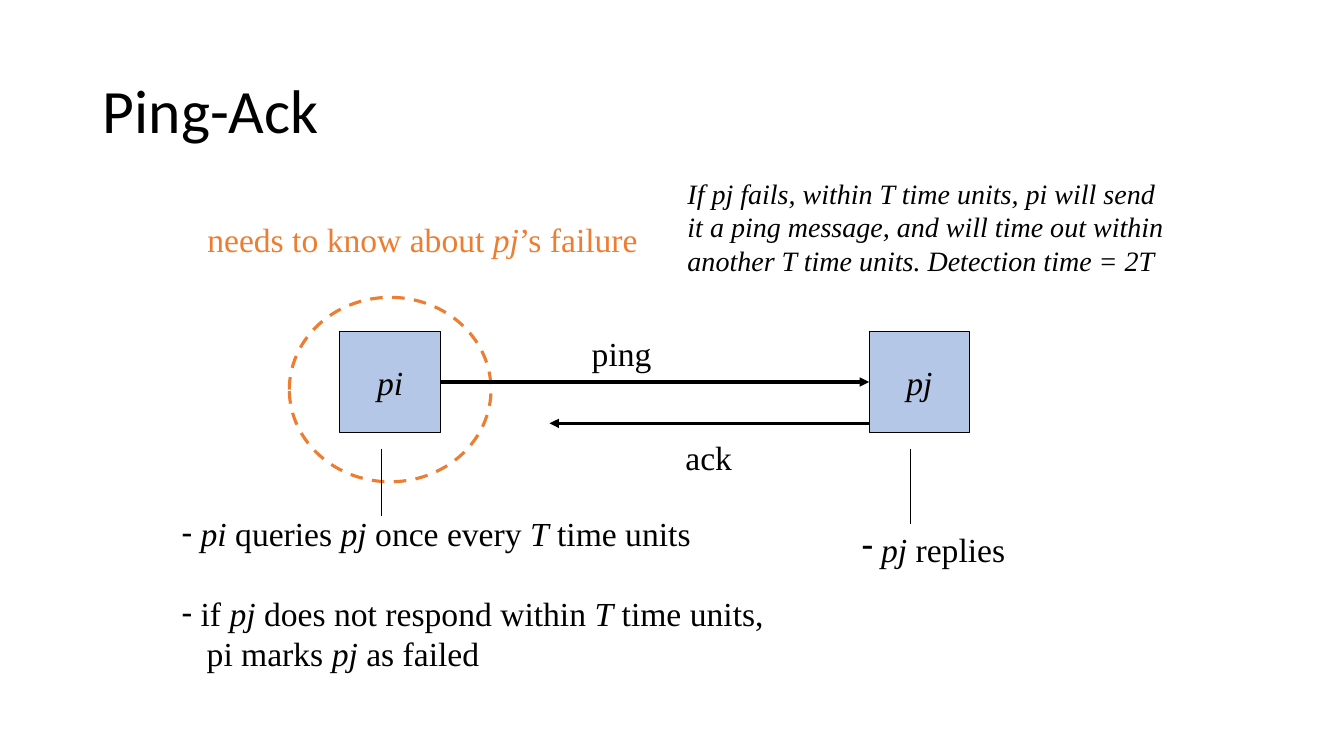
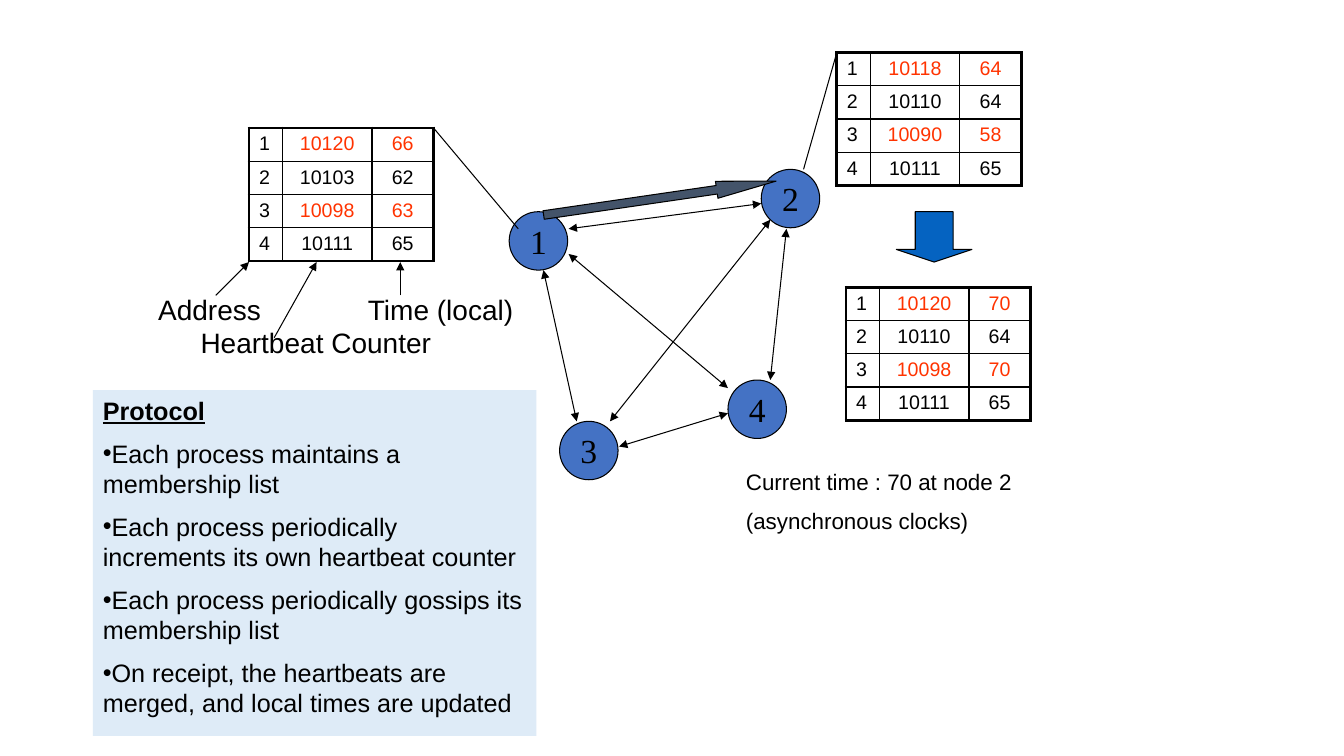
"""Build two slides on failure detection: ping-ack and gossiped heartbeats."""
import dataclasses
import typing

import lxml.etree
import pptx
import pptx.dml.color
import pptx.enum.dml
import pptx.enum.shapes
import pptx.enum.text
import pptx.oxml.ns
import pptx.util

Inches = pptx.util.Inches
Pt = pptx.util.Pt
qn = pptx.oxml.ns.qn
ALIGN = pptx.enum.text.PP_ALIGN
ANCHOR = pptx.enum.text.MSO_ANCHOR
SHAPE = pptx.enum.shapes.MSO_SHAPE

COLORS = {
    "ink": "000000", "process": "B4C7E7", "accent": "ED7D31", "node": "4472C4",
    "gossip": "44546A", "merge": "0563C1", "panel": "DEEBF7", "changed": "FF3300",
}
SERIF, SANS, HEADING = "Times New Roman", "Arial", "Calibri"
CONTENT_LAYOUT = 1
THIN, THICK = 0.75, 2.25
COLUMN_WIDTHS = (0.33, 0.89, 0.61)
ROW_HEIGHT = 0.33
NODE_SIZE = 0.58


class Box(typing.NamedTuple):
    left: float
    top: float
    width: float
    height: float


class Point(typing.NamedTuple):
    x: float
    y: float


@dataclasses.dataclass
class Para:
    text: str
    bullet: str = ""
    margin: float = 0
    hanging: float = 0
    before: float = 0
    font: dict = dataclasses.field(default_factory=dict)


@dataclasses.dataclass
class Style:
    size: float = 24
    face: str = SERIF
    color: str = "ink"
    align: ALIGN = ALIGN.LEFT
    anchor: ANCHOR = ANCHOR.TOP
    wrap: bool = False
    spacing: float = 1.0


@dataclasses.dataclass
class Link:
    start: Point
    end: Point
    weight: float = THIN
    head: bool = False
    tail: bool = False


@dataclasses.dataclass
class MembershipList:
    left: float
    top: float
    rows: tuple


LABEL = Style(align=ALIGN.CENTER, anchor=ANCHOR.MIDDLE)
TITLE = Style(44, HEADING, anchor=ANCHOR.MIDDLE, wrap=True, spacing=0.9)
CAPTION = Style(20, SANS, wrap=True)


def rgb(name: str) -> pptx.dml.color.RGBColor:
    return pptx.dml.color.RGBColor.from_string(COLORS[name])


def apply_format(target, values: dict) -> None:
    for attribute, value in values.items():
        setattr(target, attribute, value)


def place(shape, box: Box) -> None:
    apply_format(shape, {side: Inches(v) for side, v in box._asdict().items()})


def write(frame, paras: list[Para], style: Style) -> None:
    apply_format(frame, {
        "word_wrap": style.wrap,
        "auto_size": pptx.enum.text.MSO_AUTO_SIZE.NONE,
        "vertical_anchor": style.anchor,
    })
    for index, para in enumerate(paras):
        line = frame.add_paragraph() if index else frame.paragraphs[0]
        apply_format(line, {
            "alignment": style.align,
            "line_spacing": style.spacing,
            "space_before": Pt(para.before),
        })
        properties = line._p.get_or_add_pPr()
        properties.set("marL", str(Inches(para.margin)))
        properties.set("indent", str(Inches(-para.hanging)))
        if para.bullet:
            lxml.etree.SubElement(properties, qn("a:buChar")).set("char", para.bullet)
        else:
            lxml.etree.SubElement(properties, qn("a:buNone"))
        for position, piece in enumerate(para.text.split("*")):
            if piece:
                run = line.add_run()
                run.text = piece
                apply_format(run.font, {
                    "size": Pt(style.size), "name": style.face,
                    "italic": position % 2 == 1, **para.font,
                })
                run.font.color.rgb = rgb(style.color)


def add_text(slide, box: Box, paras: list[Para], style: Style) -> None:
    textbox = slide.shapes.add_textbox(*map(Inches, box))
    write(textbox.text_frame, paras, style)


def add_block(slide, kind: SHAPE, box: Box, fill: str = "", text: str = "",
              line: str = "ink", weight: float = THIN):
    block = slide.shapes.add_shape(kind, *map(Inches, box))
    block.shadow.inherit = False
    if fill:
        block.fill.solid()
        block.fill.fore_color.rgb = rgb(fill)
    else:
        block.fill.background()
    block.line.color.rgb = rgb(line)
    block.line.width = Pt(weight)
    if text:
        write(block.text_frame, [Para(text)], LABEL)
    return block


def add_link(slide, link: Link):
    connector = slide.shapes.add_connector(
        pptx.enum.shapes.MSO_CONNECTOR.STRAIGHT,
        *map(Inches, (*link.start, *link.end)))
    connector.line.color.rgb = rgb("ink")
    connector.line.width = Pt(link.weight)
    properties = connector._element.spPr
    outline = properties.find(qn("a:ln"))
    for tag, wanted in (("a:headEnd", link.head), ("a:tailEnd", link.tail)):
        if wanted:
            lxml.etree.SubElement(outline, qn(tag)).set("type", "triangle")
    lxml.etree.SubElement(properties, qn("a:effectLst"))
    return connector


def set_borders(cell, weights: dict[str, float]) -> None:
    properties = cell._tc.get_or_add_tcPr()
    for side, weight in weights.items():
        border = lxml.etree.SubElement(properties, qn(f"a:ln{side}"))
        border.set("w", str(Pt(weight)))
        fill = lxml.etree.SubElement(border, qn("a:solidFill"))
        lxml.etree.SubElement(fill, qn("a:srgbClr")).set("val", COLORS["ink"])


def add_membership(slide, members: MembershipList) -> None:
    last_row, last_column = len(members.rows) - 1, len(COLUMN_WIDTHS) - 1
    box = Box(members.left, members.top, sum(COLUMN_WIDTHS),
              ROW_HEIGHT * len(members.rows))
    table = slide.shapes.add_table(
        last_row + 1, last_column + 1, *map(Inches, box)).table
    apply_format(table, {"first_row": False, "horz_banding": False})
    for column, width in zip(table.columns, COLUMN_WIDTHS):
        column.width = Inches(width)
    for r, entry in enumerate(members.rows):
        table.rows[r].height = Inches(ROW_HEIGHT)
        for c, value in enumerate((r + 1, *entry)):
            cell = table.cell(r, c)
            edges = {"L": c == 0, "R": c == last_column,
                     "T": r == 0, "B": r == last_row}
            set_borders(cell, {side: THICK if outer else 1
                               for side, outer in edges.items()})
            cell.fill.background()
            style = Style(14, SANS, "changed" if c and r % 2 == 0 else "ink",
                          ALIGN.CENTER if c else ALIGN.LEFT, wrap=True)
            write(cell.text_frame, [Para(str(value))], style)


def build_ping_ack(deck) -> None:
    slide = deck.slides.add_slide(deck.slide_layouts[CONTENT_LAYOUT])
    title, queries = slide.placeholders
    place(title, Box(0.92, 0.4, 11.5, 1.45))
    write(title.text_frame, [Para("Ping-Ack")], TITLE)

    dash = {"bullet": "-", "margin": 0.19, "hanging": 0.19}
    place(queries, Box(1.7, 5.04, 6.3, 1.72))
    write(queries.text_frame, [
        Para("*pi* queries *pj* once every *T* time units", **dash),
        Para("if *pj* does not respond within *T* time units,", before=28, **dash),
        Para("pi marks *pj* as failed", margin=0.25),
    ], Style(wrap=True))

    sender, receiver = (
        add_block(slide, SHAPE.RECTANGLE, Box(left, 3.29, 1, 1), "process", f"*{name}*")
        for name, left in (("pi", 3.37), ("pj", 8.62)))
    observer = add_block(slide, SHAPE.OVAL, Box(2.87, 2.95, 2, 1.83),
                         line="accent", weight=THICK)
    observer.line.dash_style = pptx.enum.dml.MSO_LINE.DASH

    ping = add_link(slide, Link(Point(4.37, 3.79), Point(8.62, 3.79), THICK, tail=True))
    ping.begin_connect(sender, 3)
    ping.end_connect(receiver, 1)
    for link in (
        Link(Point(8.62, 4.2), Point(5.45, 4.2), THICK, tail=True),
        Link(Point(3.78, 4.45), Point(3.78, 5.12)),
        Link(Point(9.03, 4.45), Point(9.03, 5.2)),
    ):
        add_link(slide, link)

    add_text(slide, Box(1.95, 2.12, 4.48, 0.5),
             [Para("needs to know about *pj*’s failure")],
             Style(color="accent", align=ALIGN.CENTER))
    add_text(slide, Box(8.45, 5.2, 1.62, 0.5), [Para("*pj* replies", **dash)], Style())
    add_text(slide, Box(5.77, 3.25, 0.79, 0.5), [Para("ping")], Style())
    add_text(slide, Box(6.7, 4.29, 0.66, 0.5), [Para("ack")], Style())
    add_text(slide, Box(6.72, 1.7, 4.98, 1.1), [
        Para("*If pj fails, within T time units, pi will send*"),
        Para("*it a ping message, and will time out within*"),
        Para("*another T time units. Detection time = 2T*"),
    ], Style(20))


def build_gossip(deck) -> None:
    slide = deck.slides.add_slide(deck.slide_layouts[CONTENT_LAYOUT])
    title, protocol = slide.placeholders
    title._element.getparent().remove(title._element)
    place(protocol, Box(0.92, 3.87, 4.4, 3.43))
    protocol.fill.solid()
    protocol.fill.fore_color.rgb = rgb("panel")
    steps = (
        "Each process maintains a membership list",
        "Each process periodically increments its own heartbeat counter",
        "Each process periodically gossips its membership list",
        "On receipt, the heartbeats are merged, and local times are updated",
    )
    heading = Para("Protocol", font={"bold": True, "underline": True})
    write(protocol.text_frame,
          [heading, *(Para(step, bullet="•", before=9) for step in steps)],
          Style(18, SANS, wrap=True))

    nodes = {"1": Point(5.05, 2.1), "2": Point(7.55, 1.68),
             "3": Point(5.55, 4.18), "4": Point(7.22, 3.77)}
    for name, corner in nodes.items():
        add_block(slide, SHAPE.OVAL, Box(*corner, NODE_SIZE, NODE_SIZE), "node", name)

    channels = (
        (Point(5.64, 2.27), Point(7.55, 2.02)), (Point(5.39, 2.68), Point(5.72, 4.18)),
        (Point(6.14, 4.43), Point(7.22, 4.1)), (Point(7.64, 3.77), Point(7.8, 2.27)),
        (Point(6.05, 4.18), Point(7.64, 2.18)), (Point(7.22, 3.85), Point(5.64, 2.52)),
    )
    pointers = (
        (Point(2.14, 2.93), Point(2.47, 2.6)), (Point(2.72, 3.35), Point(3.14, 2.6)),
        (Point(3.97, 2.93), Point(3.97, 2.6)),
    )
    owners = ((Point(5.14, 2.27), Point(4.3, 1.27)), (Point(7.97, 1.68), Point(8.3, 0.52)))
    for ends, head, tail in ((channels, True, True), (pointers, False, True),
                             (owners, False, False)):
        for start, end in ends:
            add_link(slide, Link(start, end, head=head, tail=tail))

    gossip = add_block(slide, SHAPE.RIGHT_ARROW, Box(5.38, 1.88, 2.33, 0.17), "gossip")
    gossip.rotation = 351.7
    gossip.adjustments[1] = 3.5
    merge = add_block(slide, SHAPE.DOWN_ARROW, Box(8.89, 2.1, 0.75, 0.5), "merge")
    merge.adjustments[1] = 0.25

    for members in (
        MembershipList(2.47, 1.27, ((10120, 66), (10103, 62), (10098, 63), (10111, 65))),
        MembershipList(8.3, 0.52, ((10118, 64), (10110, 64), (10090, 58), (10111, 65))),
        MembershipList(8.39, 2.85, ((10120, 70), (10110, 64), (10098, 70), (10111, 65))),
    ):
        add_membership(slide, members)

    for caption, box in (
        ("Address", Box(1.47, 2.85, 1.33, 0.43)),
        ("Heartbeat Counter", Box(1.89, 3.18, 2.58, 0.43)),
        ("Time (local)", Box(3.55, 2.85, 1.75, 0.43)),
    ):
        add_text(slide, box, [Para(caption)], CAPTION)
    add_text(slide, Box(7.3, 4.6, 3, 0.77), [
        Para("Current time : 70 at node 2"), Para("(asynchronous clocks)", before=8),
    ], Style(16, SANS, wrap=True))


def main() -> None:
    deck = pptx.Presentation()
    apply_format(deck, {"slide_width": Inches(13.33), "slide_height": Inches(7.5)})
    build_ping_ack(deck)
    build_gossip(deck)
    deck.save("out.pptx")


if __name__ == "__main__":
    main()
